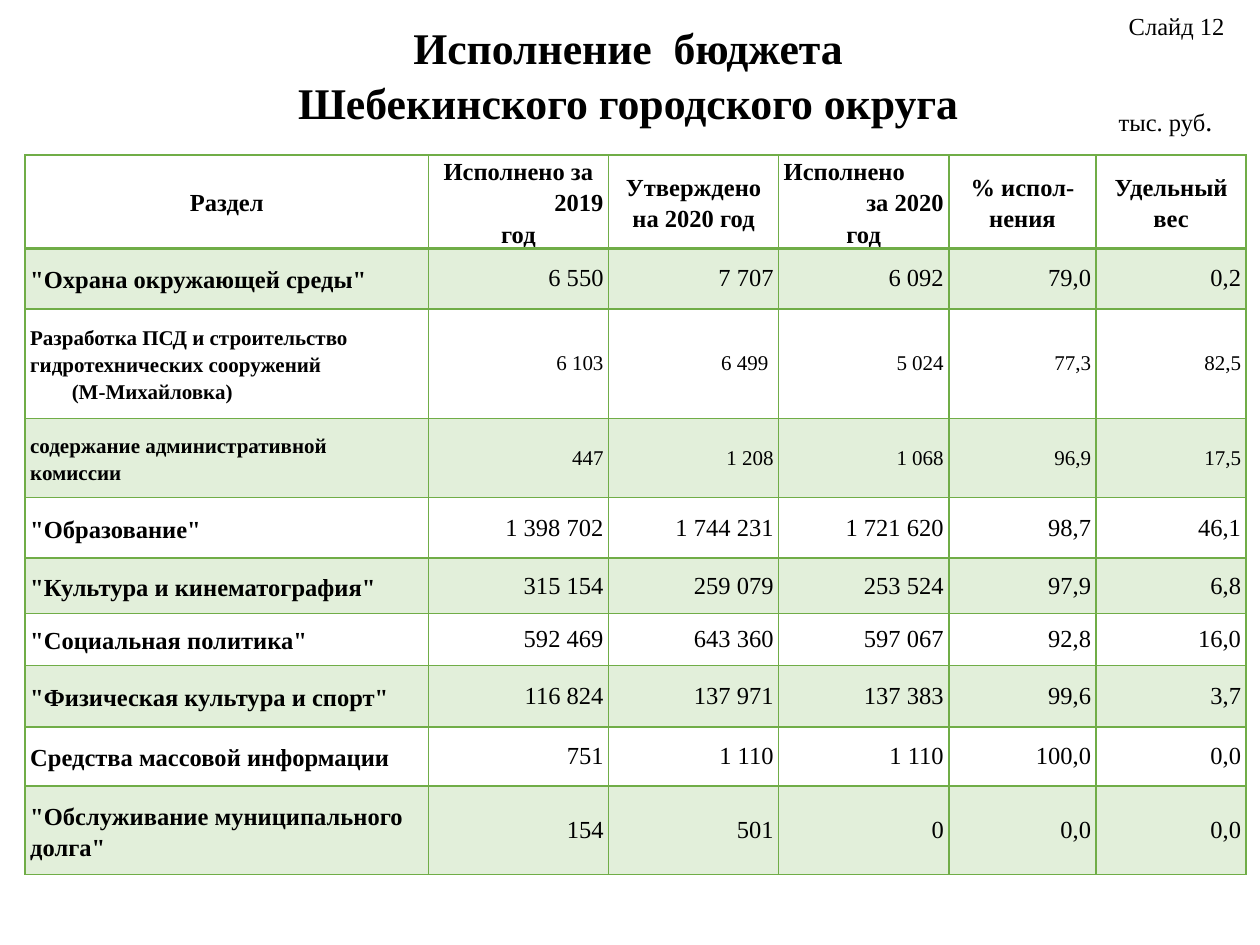
from lxml.etree import SubElement
from pptx import Presentation
from pptx.dml.color import RGBColor
from pptx.enum.text import MSO_ANCHOR, MSO_AUTO_SIZE, PP_ALIGN
from pptx.oxml.ns import qn
from pptx.util import Inches, Pt

FONT = "Times New Roman"
BLACK = RGBColor(0x00, 0x00, 0x00)
GREEN = RGBColor(0x70, 0xAD, 0x47)
PALE_GREEN = RGBColor(0xE2, 0xEF, 0xDA)
LEFT, CENTER, RIGHT = PP_ALIGN.LEFT, PP_ALIGN.CENTER, PP_ALIGN.RIGHT

# Content
TITLE = ["Исполнение  бюджета", "Шебекинского городского округа"]
SLIDE_LABEL = "Слайд 12"
UNIT, UNIT_STOP = "тыс. руб", "."

# Header: lines of each column with their alignments
HEADER = [
    (["Раздел"], [CENTER]),
    (["Исполнено за", "2019", "год"], [CENTER, RIGHT, CENTER]),
    (["Утверждено на 2020 год"], [CENTER]),
    (["Исполнено", "за 2020", "год"], [LEFT, RIGHT, CENTER]),
    (["% испол- нения"], [CENTER]),
    (["Удельный вес"], [CENTER]),
]
# Section lines, text size, values
SECTIONS = [
    (['"Охрана окружающей среды"'], 14,
     ["6 550", "7 707", "6 092", "79,0", "0,2"]),
    (["Разработка ПСД и строительство гидротехнических сооружений", "(М-Михайловка)"], 12,
     ["6 103", "6 499 ", "5 024", "77,3", "82,5"]),
    (["содержание административной комиссии"], 12,
     ["447", "1 208", "1 068", "96,9", "17,5"]),
    (['"Образование"'], 14,
     ["1 398 702", "1 744 231", "1 721 620", "98,7", "46,1"]),
    (['"Культура и кинематография"'], 14,
     ["315 154", "259 079", "253 524", "97,9", "6,8"]),
    (['"Социальная политика"'], 14,
     ["592 469", "643 360", "597 067", "92,8", "16,0"]),
    (['"Физическая культура и спорт"'], 14,
     ["116 824", "137 971", "137 383", "99,6", "3,7"]),
    (["Средства массовой информации"], 14,
     ["751", "1 110", "1 110", "100,0", "0,0"]),
    (['"Обслуживание муниципального долга"'], 14,
     ["154", "501", "0", "0,0", "0,0"]),
]
COLUMN_WIDTHS = [3.2, 1.43, 1.35, 1.35, 1.17, 1.19]
ROW_HEIGHTS = [0.7, 0.48, 0.87, 0.63, 0.48, 0.44, 0.41, 0.49, 0.47, 0.7]
SECOND_LINE_INDENT = 0.33


def write(frame, lines, size=14, bold=False, aligns=(LEFT,), spacing=None, indent=0):
    """Write one paragraph per line; indent applies after the first line."""
    for index, line in enumerate(lines):
        paragraph = frame.paragraphs[0] if index == 0 else frame.add_paragraph()
        paragraph.alignment = aligns[min(index, len(aligns) - 1)]
        if spacing:
            paragraph.line_spacing = spacing
        if index and indent:
            paragraph._p.get_or_add_pPr().set("marL", str(Inches(indent)))
        run = paragraph.add_run()
        run.text = line
        style(run.font, size, bold)


def style(font, size, bold=False):
    font.name, font.size, font.bold = FONT, Pt(size), bold
    font.color.rgb = BLACK


def format_cell(cell, shaded, bottom_width):
    cell.vertical_anchor = MSO_ANCHOR.MIDDLE
    cell.margin_left = cell.margin_right = Inches(0.04)
    cell.margin_top = cell.margin_bottom = 0
    properties = cell._tc.get_or_add_tcPr()
    for side, width in (("L", 1), ("R", 1), ("T", 1), ("B", bottom_width)):
        line = SubElement(properties, qn(f"a:ln{side}"), w=str(Pt(width)))
        color = SubElement(SubElement(line, qn("a:solidFill")), qn("a:srgbClr"))
        color.set("val", str(GREEN))
    if shaded:
        cell.fill.solid()
        cell.fill.fore_color.rgb = PALE_GREEN
    else:
        cell.fill.background()


def add_label(slide, left, top, width, height, text):
    label = slide.shapes.add_textbox(*map(Inches, (left, top, width, height)))
    label.text_frame.word_wrap = True
    write(label.text_frame, [text])
    return label.text_frame


def add_budget_table(slide):
    table = slide.shapes.add_table(
        len(ROW_HEIGHTS), len(COLUMN_WIDTHS), Inches(0.2), Inches(1.23),
        Inches(sum(COLUMN_WIDTHS)), Inches(sum(ROW_HEIGHTS))).table
    for column, width in zip(table.columns, COLUMN_WIDTHS):
        column.width = Inches(width)
    for row, height in zip(table.rows, ROW_HEIGHTS):
        row.height = Inches(height)

    # Header row
    for column, (lines, aligns) in enumerate(HEADER):
        cell = table.cell(0, column)
        format_cell(cell, shaded=False, bottom_width=2)
        write(cell.text_frame, lines, bold=True, aligns=aligns, spacing=1.15)

    # Section rows, every other one shaded
    for row, (section, size, values) in enumerate(SECTIONS, start=1):
        for column in range(len(COLUMN_WIDTHS)):
            cell = table.cell(row, column)
            format_cell(cell, shaded=row % 2 == 1, bottom_width=1)
            if column == 0:
                write(cell.text_frame, section, size=size, bold=True,
                      spacing=1.15, indent=SECOND_LINE_INDENT)
            else:
                write(cell.text_frame, [values[column - 1]], size=size, aligns=[RIGHT])
    # The header's bottom rule is shared with the first section row
    for cell in table.rows[1].cells:
        cell._tc.tcPr.find(qn("a:lnT")).set("w", str(Pt(2)))


def main():
    deck = Presentation()
    deck.slide_width, deck.slide_height = Inches(10), Inches(7.5)
    slide = deck.slides.add_slide(deck.slide_layouts[5])

    add_budget_table(slide)

    # Title
    title = slide.shapes.title
    title.left, title.top, title.width, title.height = map(Inches, (0.11, 0.11, 9.75, 0.94))
    title.text_frame.auto_size = MSO_AUTO_SIZE.NONE
    title.text_frame.vertical_anchor = MSO_ANCHOR.MIDDLE
    write(title.text_frame, TITLE, size=25, bold=True, aligns=[CENTER], spacing=1.05)

    # Slide number and unit of measure
    add_label(slide, 8.86, 0.04, 1.05, 0.34, SLIDE_LABEL)
    unit = add_label(slide, 8.78, 0.77, 1.2, 0.37, UNIT)
    stop = unit.paragraphs[0].add_run()
    stop.text = UNIT_STOP
    style(stop.font, 16)

    deck.save("out.pptx")


if __name__ == "__main__":
    main()
